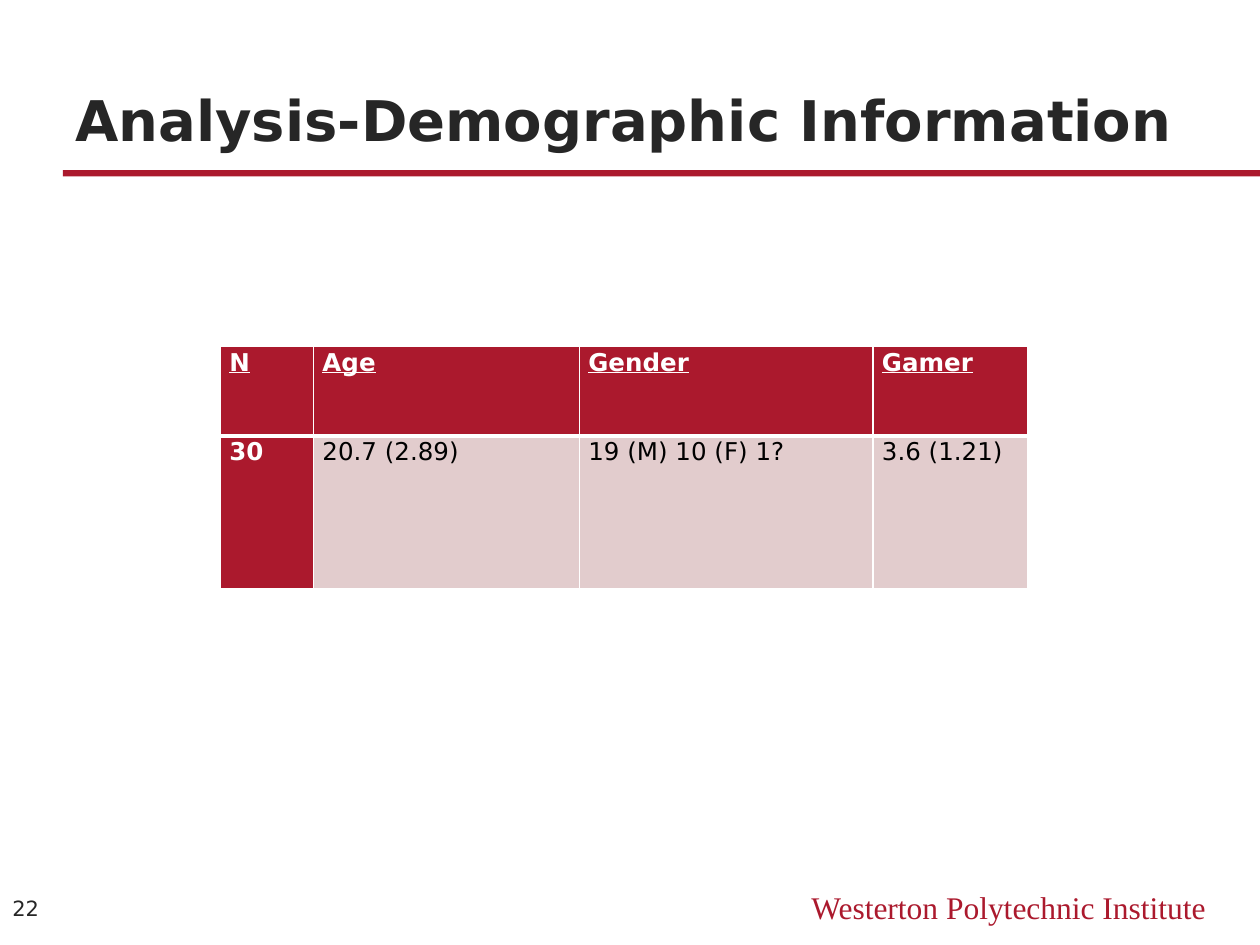
from lxml import etree
from pptx import Presentation
from pptx.dml.color import RGBColor
from pptx.enum import shapes, text
from pptx.oxml import ns
from pptx.util import Inches, Pt

COLORS = {"red": "AB192D", "pink": "E2CCCD", "dark": "262626", "white": "FFFFFF", "black": "000000"}
SANS = "DejaVu Sans"


def style(p, size, color, font=SANS, bold=False, underline=False):
    p.font.size = Pt(size)
    p.font.name = font
    p.font.bold = bold
    p.font.underline = underline
    p.font.color.rgb = RGBColor.from_string(COLORS[color])


def set_border(cell, side, width):
    ln = etree.SubElement(cell._tc.get_or_add_tcPr(), ns.qn(f"a:ln{side}"), w=str(Pt(width)))
    fill = etree.SubElement(ln, ns.qn("a:solidFill"))
    etree.SubElement(fill, ns.qn("a:srgbClr"), val=COLORS["white"])


prs = Presentation()
prs.slide_width, prs.slide_height = Inches(10), Inches(7.5)
s = prs.slides.add_slide(prs.slide_layouts[6])

rule = s.shapes.add_shape(shapes.MSO_SHAPE.RECTANGLE, Inches(0.5), Inches(1.35), Inches(9.5), Inches(0.05))
rule.shadow.inherit = False
rule.fill.solid()
rule.fill.fore_color.rgb = RGBColor.from_string(COLORS["red"])
rule.line.fill.background()

top, middle, bottom = text.MSO_ANCHOR.TOP, text.MSO_ANCHOR.MIDDLE, text.MSO_ANCHOR.BOTTOM
left, right = text.PP_ALIGN.LEFT, text.PP_ALIGN.RIGHT
labels = [
    ("Westerton Polytechnic Institute", (6, 7, 3.67, 0.4), top, right, (18, "red", "Times New Roman")),
    ("Analysis-Demographic Information", (0.5, 0.38, 9, 0.88), bottom, left, (32, "dark", SANS, True)),
    ("22", (0, 6.99, 0.5, 0.43), middle, left, (12, "dark")),
]
for words, box, anchor, align, look in labels:
    tf = s.shapes.add_textbox(*map(Inches, box)).text_frame
    tf.word_wrap = True
    tf.vertical_anchor = anchor
    p = tf.paragraphs[0]
    p.text = words
    p.alignment = align
    style(p, *look)

rows = [["N", "Age", "Gender", "Gamer"], ["30", "20.7 (2.89)", "19 (M) 10 (F) 1?", "3.6 (1.21)"]]
widths, heights = [0.74, 2.11, 2.33, 1.23], [0.71, 1.21]
table = s.shapes.add_table(2, 4, Inches(1.75), Inches(2.75), Inches(sum(widths)), Inches(sum(heights))).table
table.first_col = True
table.horz_banding = False
for col, width in zip(table.columns, widths):
    col.width = Inches(width)
for row, height in zip(table.rows, heights):
    row.height = Inches(height)

for i, values in enumerate(rows):
    for j, value in enumerate(values):
        cell = table.cell(i, j)
        header = i == 0 or j == 0
        cell.margin_left = cell.margin_right = Inches(0.07)
        cell.margin_top = cell.margin_bottom = 0
        for side in "LRTB":
            set_border(cell, side, 3 if (i, side) in [(0, "B"), (1, "T")] else 1)
        cell.fill.solid()
        cell.fill.fore_color.rgb = RGBColor.from_string(COLORS["red" if header else "pink"])
        p = cell.text_frame.paragraphs[0]
        p.text = value
        p.line_spacing = 1.07
        style(p, 14, "white" if header else "black", bold=header, underline=i == 0)

prs.save("out.pptx")
